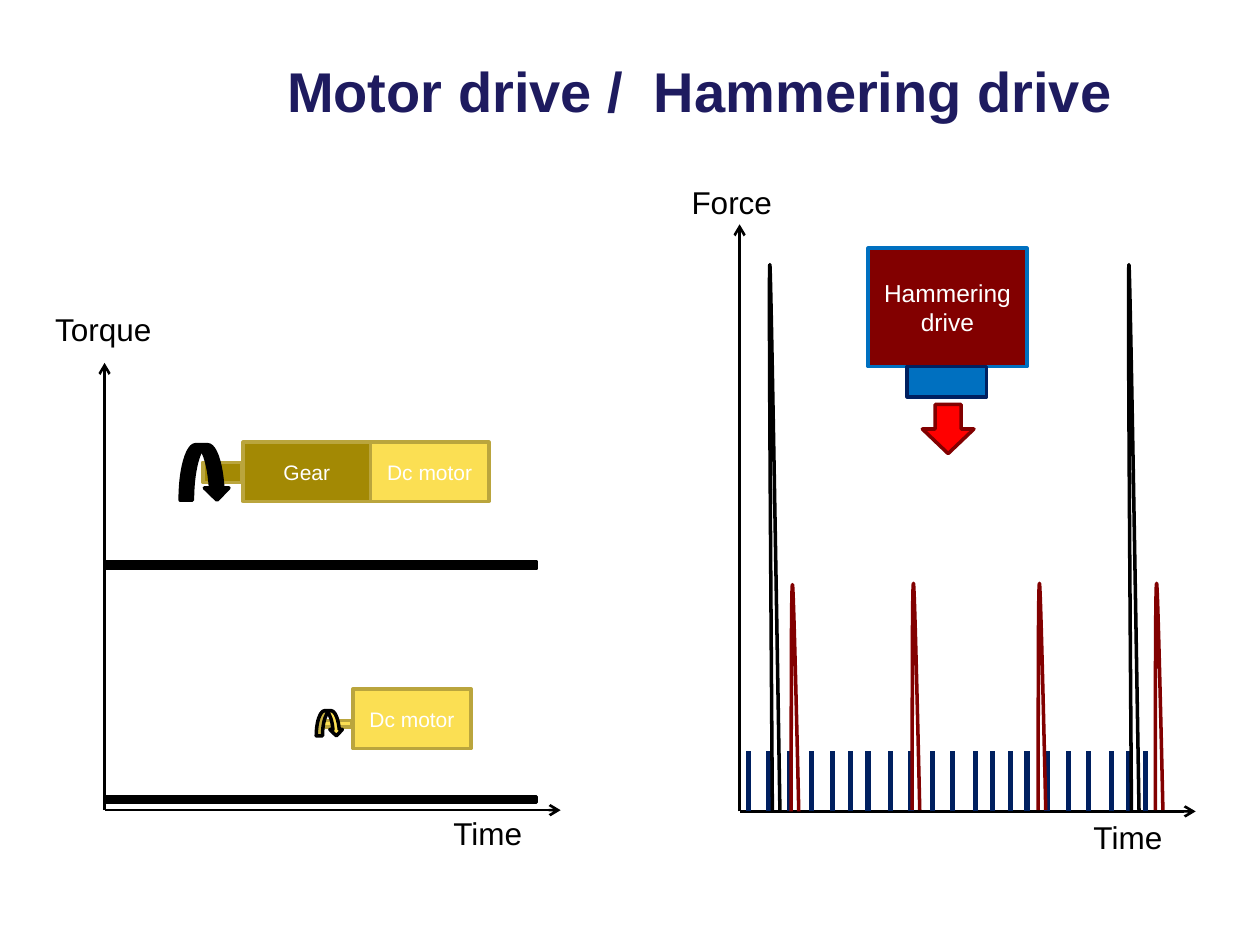
from lxml.etree import SubElement
from pptx import Presentation
from pptx.dml.color import RGBColor
from pptx.enum.shapes import MSO_CONNECTOR, MSO_SHAPE
from pptx.enum.text import MSO_ANCHOR, MSO_AUTO_SIZE, PP_ALIGN
from pptx.oxml.ns import qn
from pptx.util import Inches, Pt

COLORS = {
    "black": "000000", "white": "FFFFFF", "title": "1E1B5F", "navy": "002060",
    "blue": "0070C0", "dark_red": "820000", "red": "FF0000",
    "yellow": "FBDF53", "olive": "A38904", "gold": "BAA53D",
}
COLORS = {name: RGBColor.from_string(value) for name, value in COLORS.items()}

deck = Presentation()
deck.slide_width, deck.slide_height = Inches(10), Inches(7.5)
page = deck.slides.add_slide(deck.slide_layouts[6])
# All places are given on a grid of 10 columns by 7.5 rows.
COLUMN, ROW = deck.slide_width / 10, deck.slide_height / 7.5


def add_block(kind, at, fill, outline, label="", size=12):
    left, top, width, height = at
    block = page.shapes.add_shape(kind, int(left * COLUMN), int(top * ROW),
                                  int(width * COLUMN), int(height * ROW))
    block.shadow.inherit = False
    block.fill.solid()
    block.fill.fore_color.rgb = COLORS[fill]
    block.line.color.rgb = COLORS[outline]
    block.line.width = Pt(2)
    if label:
        block.text_frame.text = label
        block.text_frame.vertical_anchor = MSO_ANCHOR.MIDDLE
        para = block.text_frame.paragraphs[0]
        para.alignment = PP_ALIGN.CENTER
        span = para.runs[0]
        span.font.name, span.font.size = "Arial", Pt(size)
        span.font.color.rgb = COLORS["white"]


def add_line(start, end, color, width, arrow=False):
    line = page.shapes.add_connector(
        MSO_CONNECTOR.STRAIGHT, int(start[0] * COLUMN), int(start[1] * ROW),
        int(end[0] * COLUMN), int(end[1] * ROW))
    line.line.color.rgb = COLORS[color]
    line.line.width = Pt(width)
    properties = line._element.spPr
    if arrow:
        SubElement(properties.find(qn("a:ln")), qn("a:tailEnd"), type="arrow")
    SubElement(properties, qn("a:effectLst"))


# Title and axis names
for text, left, top, width, size, color in [
    ("Motor drive /  Hammering drive", 1.38, 0.36, 8.35, 32, "title"),
    ("Torque", 0.34, 2.41, 0.97, 18, "black"),
    ("Time", 3.5, 6.41, 0.75, 18, "black"),
    ("Force", 5.39, 1.4, 0.85, 18, "black"),
    ("Time", 8.58, 6.44, 0.75, 18, "black"),
]:
    is_title = color == "title"
    box = page.shapes.add_textbox(int(left * COLUMN), int(top * ROW),
                                  int(width * COLUMN), int(0.71 * ROW))
    frame = box.text_frame
    frame.text = text
    frame.word_wrap = is_title
    frame.auto_size = MSO_AUTO_SIZE.NONE if is_title else MSO_AUTO_SIZE.SHAPE_TO_FIT_TEXT
    frame.vertical_anchor = MSO_ANCHOR.MIDDLE if is_title else MSO_ANCHOR.TOP
    para = frame.paragraphs[0]
    para.alignment = PP_ALIGN.CENTER if is_title else PP_ALIGN.LEFT
    span = para.runs[0]
    span.font.name, span.font.size, span.font.bold = "Arial", Pt(size), is_title
    span.font.color.rgb = COLORS[color]

# Axes of the torque and force graphs
AXIS_LENGTH = 3.62
for origin_x, origin_y, axis_top in [(0.83, 6.43, 2.88), (5.87, 6.44, 1.78)]:
    origin = (origin_x, origin_y)
    add_line(origin, (origin_x, axis_top), "black", 1.5, arrow=True)
    add_line(origin, (origin_x + AXIS_LENGTH, origin_y), "black", 1.5, arrow=True)

# Constant torque levels
for level in (6.32, 4.46):
    add_block(MSO_SHAPE.RECTANGLE, (0.83, level, 3.43, 0.05), "black", "black")

# Motors, gear and hammering drive
for at, fill, outline, label, size in [
    ((2.8, 5.47, 0.94, 0.47), "yellow", "gold", "Dc motor", 12),
    ((2.54, 5.72, 0.25, 0.05), "yellow", "gold", "", 12),
    ((2.94, 3.51, 0.94, 0.47), "yellow", "gold", "Dc motor", 12),
    ((1.93, 3.51, 1.01, 0.47), "olive", "gold", "Gear", 12),
    ((1.61, 3.67, 0.31, 0.16), "olive", "gold", "", 12),
    ((6.89, 1.97, 1.26, 0.94), "dark_red", "blue", "Hammering drive", 14),
    ((7.2, 2.91, 0.63, 0.24), "blue", "navy", "", 12),
]:
    add_block(MSO_SHAPE.RECTANGLE, at, fill, outline, label, size)

# Small, frequent force pulses
for x in (5.94, 6.1, 6.27, 6.44, 6.61, 6.75, 6.89, 7.07, 7.23, 7.4, 7.56,
          7.74, 7.88, 8.02, 8.15, 8.31, 8.48, 8.64, 8.82, 8.96, 9.09):
    add_line((x, 6.44), (x, 5.96), "navy", 3)

# Force spikes: each is two Bezier curves meeting at the peak
for left, peak, bottom, pull, lean, color in [
    (6.13, 2.1, 6.45, -0.03, -0.02, "black"),
    (6.28, 4.64, 6.44, 0, 0.01, "dark_red"),
    (9.17, 4.63, 6.43, 0, 0.01, "dark_red"),
    (8.24, 4.63, 6.43, 0, 0.01, "dark_red"),
    (7.24, 4.63, 6.43, 0, 0.01, "dark_red"),
    (8.98, 2.1, 6.45, -0.03, -0.02, "black"),
]:
    end = (left + 0.06, bottom)
    points = [(left + pull / 2, (peak + bottom) / 2), (left + pull, peak),
              (left + lean, peak), (left + lean + 0.01, peak), end, end]
    builder = page.shapes.build_freeform(int(left * COLUMN), int(bottom * ROW))
    builder.add_line_segments([(int(x * COLUMN), int(y * ROW)) for x, y in points], close=False)
    spike = builder.convert_to_shape()
    # Every three straight segments become one cubic curve.
    segments = list(spike._element.iter(qn("a:lnTo")))
    outline = segments[0].getparent()
    for first in range(0, len(segments), 3):
        curve = SubElement(outline, qn("a:cubicBezTo"))
        for segment in segments[first:first + 3]:
            curve.append(segment[0])
            outline.remove(segment)
    spike.shadow.inherit = False
    spike.fill.background()
    spike.line.color.rgb = COLORS[color]
    spike.line.width = Pt(2)

# Direction of the blow and of the rotations
add_block(MSO_SHAPE.DOWN_ARROW, (7.32, 3.21, 0.41, 0.39), "red", "dark_red")
add_block(MSO_SHAPE.CURVED_DOWN_ARROW, (2.51, 5.64, 0.21, 0.2), "yellow", "black")
add_block(MSO_SHAPE.CURVED_DOWN_ARROW, (1.43, 3.53, 0.39, 0.44), "black", "black")

deck.save("out.pptx")
